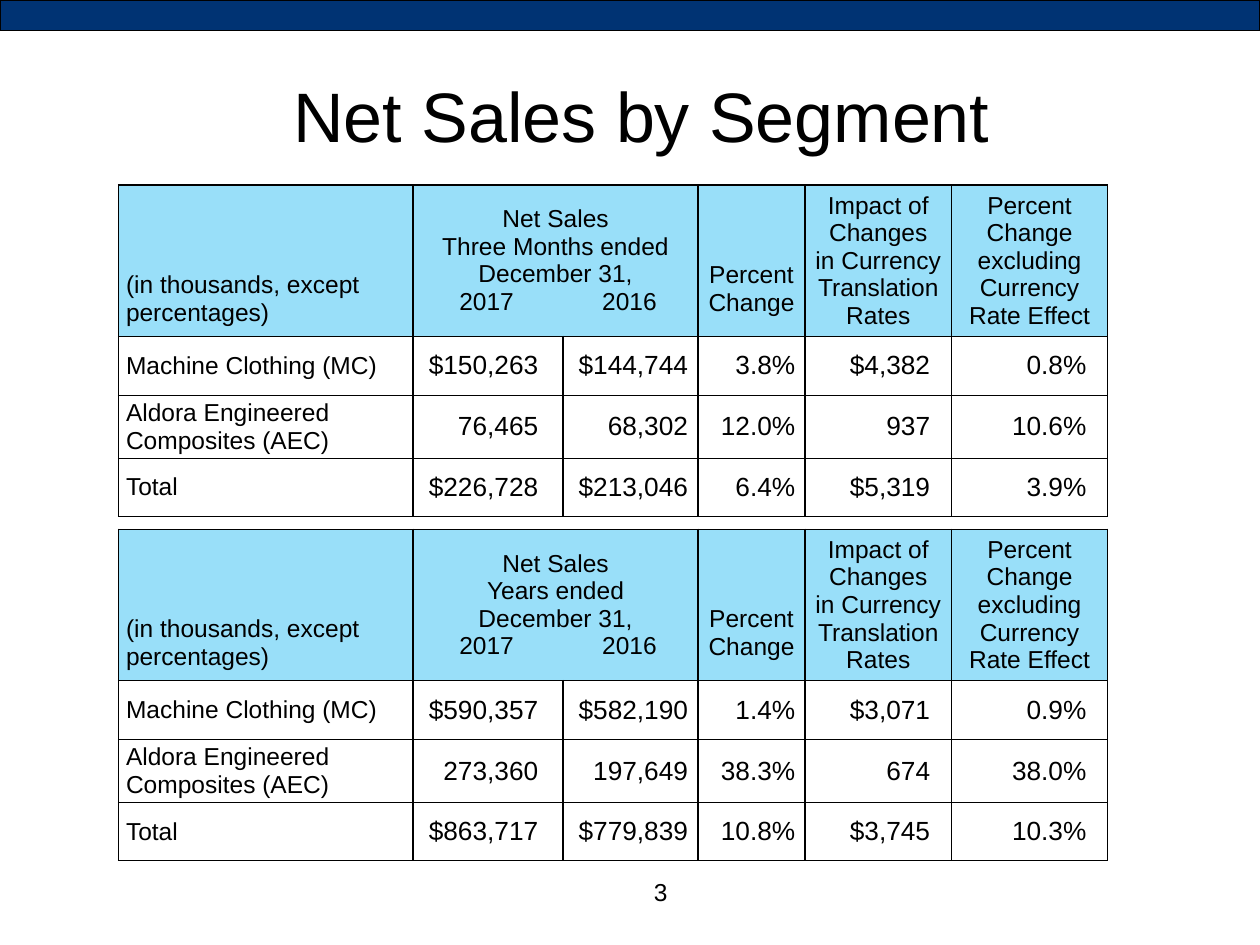
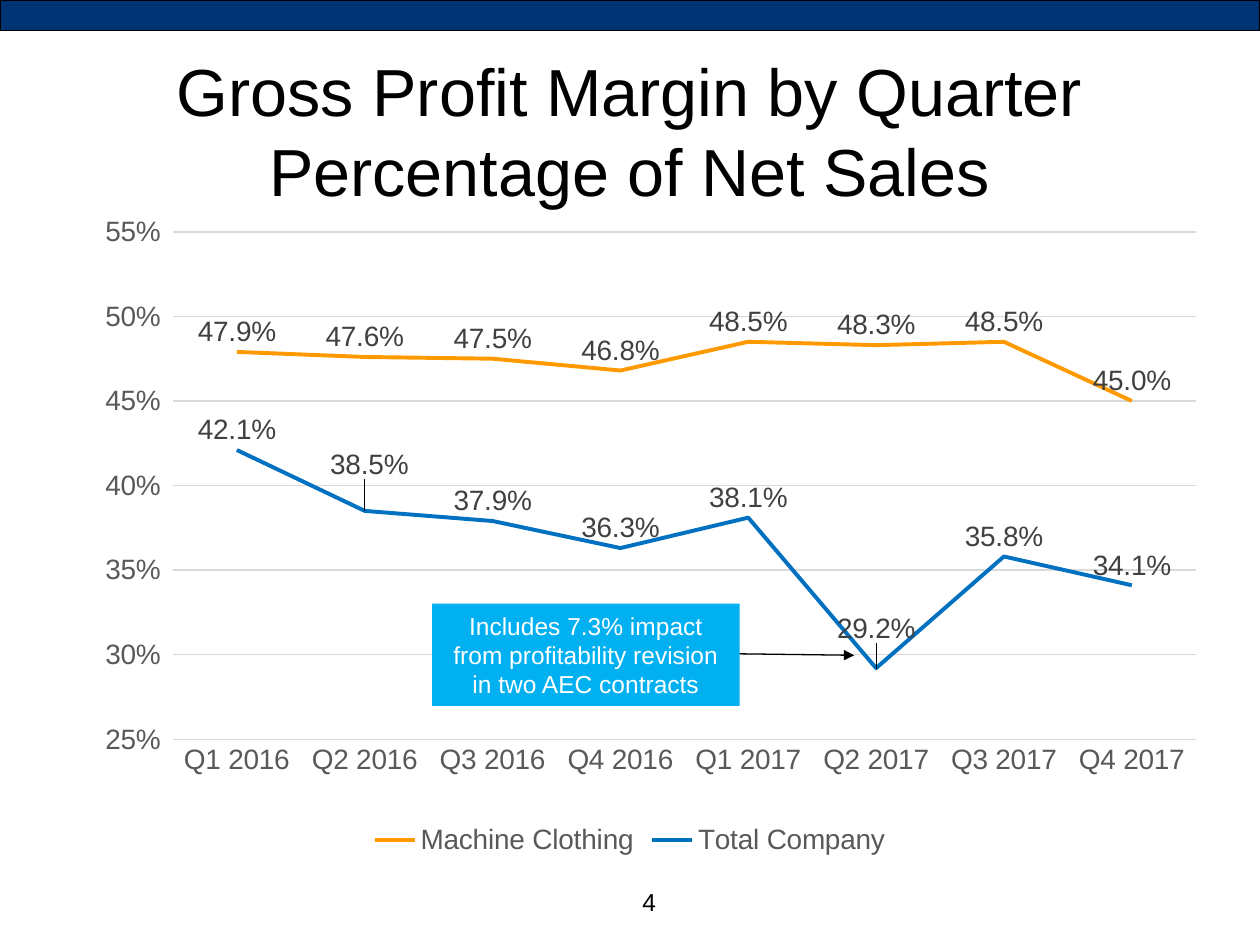
from dataclasses import dataclass

from lxml import etree
from pptx import Presentation
from pptx.chart import data as cd
from pptx.dml.color import RGBColor
from pptx.enum import chart as ch, shapes, text
from pptx.oxml import parse_xml
from pptx.oxml.ns import nsdecls, qn
from pptx.util import Cm, Pt


@dataclass(frozen=True)
class Theme:
    font: str = "Arial"
    black: str = "000000"
    white: str = "FFFFFF"
    navy: str = "003373"
    sky: str = "00B0F0"
    orange: str = "FF9900"
    blue: str = "0070C0"
    axis_grey: str = "595959"
    label_grey: str = "404040"
    grid_grey: str = "D9D9D9"
    body: int = 14
    figure: int = 15
    chart: int = 16
    hairline: float = 0.75


CENTER, LEFT, RIGHT = text.PP_ALIGN.CENTER, text.PP_ALIGN.LEFT, text.PP_ALIGN.RIGHT
TOP, MIDDLE, BOTTOM = (text.MSO_ANCHOR.TOP, text.MSO_ANCHOR.MIDDLE,
                       text.MSO_ANCHOR.BOTTOM)

COLUMN_WIDTHS = (5.94, 3.02, 2.72, 2.16, 2.95, 3.15)
ROW_HEIGHTS = (3.05, 1.19, 1.27, 1.17)
FIGURE_MARGINS = (0.5, 0.2, 0.2, 0.43, 0.43)
YEAR_TABS = (1.33, 4.21)
CELL_MARGIN = 0.15
SEGMENTS = ("Machine Clothing (MC)", "Aldora Engineered Composites (AEC)", "Total")

QUARTER_FIGURES = (
    ("$150,263", "$144,744", "3.8%", "$4,382", "0.8%"),
    ("76,465", "68,302", "12.0%", "937", "10.6%"),
    ("$226,728", "$213,046", "6.4%", "$5,319", "3.9%"),
)
YEAR_FIGURES = (
    ("$590,357", "$582,190", "1.4%", "$3,071", "0.9%"),
    ("273,360", "197,649", "38.3%", "674", "38.0%"),
    ("$863,717", "$779,839", "10.8%", "$3,745", "10.3%"),
)

QUARTERS = [f"Q{q} {year}" for year in (2016, 2017) for q in (1, 2, 3, 4)]
MACHINE_CLOTHING = (0.479, 0.476, 0.475, 0.468, 0.485, 0.483, 0.485, 0.45)
TOTAL_COMPANY = (0.421, 0.385, 0.379, 0.363, 0.381, 0.292, 0.358, 0.341)


def rgb(color):
    return RGBColor.from_string(color)


def manual_layout(**values):
    """Return a c:layout element; keys are the names of its children."""
    children = "".join(f'<c:{k} val="{v}"/>' for k, v in values.items())
    return parse_xml(f'<c:layout {nsdecls("c")}><c:manualLayout>{children}'
                     "</c:manualLayout></c:layout>")


class Deck:
    def __init__(self, theme):
        self.theme = theme
        self.prs = Presentation()
        self.prs.slide_width, self.prs.slide_height = Cm(25.4), Cm(19.05)
        self.s = None

    def new_slide(self, title_lines, x, y, size):
        first = self.s is None
        self.s = self.prs.slides.add_slide(self.prs.slide_layouts[5])
        if first:
            self.master_band()
        sp = self.s.shapes.title
        sp.left, sp.top, sp.width, sp.height = Cm(x), Cm(y), Cm(22.86), Cm(3.18)
        tf = sp.text_frame
        tf.auto_size = text.MSO_AUTO_SIZE.NONE
        tf.vertical_anchor = TOP
        tf.margin_top = Cm(0.25)
        p = tf.paragraphs[0]
        p.alignment = CENTER
        for i, line in enumerate(title_lines):
            if i:
                p.add_line_break()
            self.run(p, line, size)

    def master_band(self):
        """Draw the top band and move it to the master, behind all slides."""
        sp = self.box(0, 0, 25.4, 0.61, self.theme.navy)
        self.outline(sp.line)
        self.prs.slide_master.shapes.element.insert(2, sp.element)

    def style(self, font, size, color=None):
        font.name, font.size = self.theme.font, Pt(size)
        font.color.rgb = rgb(color or self.theme.black)

    def run(self, p, words, size, color=None):
        r = p.add_run()
        r.text = words
        self.style(r.font, size, color)

    def outline(self, line, color=None):
        line.color.rgb = rgb(color or self.theme.black)
        line.width = Pt(self.theme.hairline)

    def box(self, x, y, w, h, fill):
        sp = self.s.shapes.add_shape(shapes.MSO_SHAPE.RECTANGLE,
                                     Cm(x), Cm(y), Cm(w), Cm(h))
        sp.shadow.inherit = False
        sp.fill.solid()
        sp.fill.fore_color.rgb = rgb(fill)
        sp.line.fill.background()
        return sp

    def callout(self, words, x, y, w, h):
        tf = self.box(x, y, w, h, self.theme.sky).text_frame
        tf.word_wrap = True
        tf.vertical_anchor = MIDDLE
        p = tf.paragraphs[0]
        p.alignment = CENTER
        self.run(p, words, self.theme.body, self.theme.white)

    def arrow(self, x1, y1, x2, y2):
        line = self.s.shapes.add_connector(shapes.MSO_CONNECTOR.STRAIGHT,
                                           Cm(x1), Cm(y1), Cm(x2), Cm(y2))
        self.outline(line.line)
        props = line.element.spPr
        ln = props.find(qn("a:ln"))
        etree.SubElement(ln, qn("a:tailEnd"), type="triangle")
        etree.SubElement(props, qn("a:effectLst"))

    def page_number(self, number, x, y, w):
        sp = self.s.shapes.add_textbox(Cm(x), Cm(y), Cm(w), Cm(0.86))
        sp.text_frame.word_wrap = True
        self.run(sp.text_frame.paragraphs[0], str(number), self.theme.body)

    def cell(self, cell, lines, size, align=LEFT, anchor=MIDDLE,
             right=CELL_MARGIN, bottom=0.0, header=False):
        cell.margin_left, cell.margin_right = Cm(CELL_MARGIN), Cm(right)
        cell.margin_top, cell.margin_bottom = 0, Cm(bottom)
        cell.vertical_anchor = anchor
        tf = cell.text_frame
        for i, line in enumerate(lines):
            p = tf.add_paragraph() if i else tf.paragraphs[0]
            p.alignment = align
            if "\t" in line:
                self.year_tabs(p)
            self.run(p, line, size)
        self.cell_frame(cell, header)

    def year_tabs(self, p):
        p.alignment = LEFT
        tabs = etree.SubElement(p._p.get_or_add_pPr(), qn("a:tabLst"))
        for pos in YEAR_TABS:
            etree.SubElement(tabs, qn("a:tab"), pos=str(Cm(pos)), algn="ctr")

    def cell_frame(self, cell, header):
        """Set the fill and the four borders of a cell."""
        if header:
            cell.fill.solid()
            cell.fill.fore_color.rgb = rgb(self.theme.sky)
        else:
            cell.fill.background()
        props = cell._tc.get_or_add_tcPr()
        for color in props.iter(qn("a:srgbClr")):
            etree.SubElement(color, qn("a:alpha"), val="40000")
        for i, side in enumerate("LRTB"):
            props.insert(i, parse_xml(
                f'<a:ln{side} {nsdecls("a")} w="{Pt(1)}"><a:solidFill>'
                f'<a:srgbClr val="{self.theme.black}"/></a:solidFill></a:ln{side}>'))

    def sales_table(self, y, period, figures):
        t = self.theme
        table = self.s.shapes.add_table(
            len(ROW_HEIGHTS), len(COLUMN_WIDTHS), Cm(2.39), Cm(y),
            Cm(sum(COLUMN_WIDTHS)), Cm(sum(ROW_HEIGHTS))).table
        table.first_row = table.horz_banding = False
        for col, width in zip(table.columns, COLUMN_WIDTHS):
            col.width = Cm(width)
        for row, height in zip(table.rows, ROW_HEIGHTS):
            row.height = Cm(height)
        table.cell(0, 1).merge(table.cell(0, 2))
        headers = (
            (["(in thousands, except percentages)"], LEFT, BOTTOM, 0.2),
            (["Net Sales", period, "December 31,", "\t2017\t2016"], CENTER, MIDDLE, 0),
            ([], CENTER, MIDDLE, 0),
            (["Percent", "Change"], CENTER, BOTTOM, 0.4),
            (["Impact of Changes", "in Currency", "Translation Rates"],
             CENTER, MIDDLE, 0),
            (["Percent Change", "excluding Currency Rate Effect"], CENTER, MIDDLE, 0),
        )
        for c, (lines, align, anchor, bottom) in enumerate(headers):
            self.cell(table.cell(0, c), lines, t.body, align, anchor,
                      bottom=bottom, header=True)
        for r, (segment, values) in enumerate(zip(SEGMENTS, figures), 1):
            self.cell(table.cell(r, 0), [segment], t.body)
            for c, (value, margin) in enumerate(zip(values, FIGURE_MARGINS), 1):
                self.cell(table.cell(r, c), [value], t.figure, RIGHT, right=margin)

    def margin_chart(self, x, y, w, h):
        t = self.theme
        data = cd.CategoryChartData(number_format="0.0%")
        data.categories = QUARTERS
        data.add_series("Machine Clothing", MACHINE_CLOTHING)
        data.add_series("Total Company", TOTAL_COMPANY)
        chart = self.s.shapes.add_chart(ch.XL_CHART_TYPE.LINE, Cm(x), Cm(y),
                                        Cm(w), Cm(h), data).chart
        self.style(chart.font, t.chart, t.axis_grey)
        chart.has_title = False
        chart.has_legend = True
        chart.legend.position = ch.XL_LEGEND_POSITION.BOTTOM
        chart.legend.include_in_layout = False
        self.style(chart.legend.font, t.chart, t.axis_grey)
        self.chart_axes(chart.category_axis, chart.value_axis)
        plot = chart.plots[0]
        plot.vary_by_categories = False
        for series, color in zip(plot.series, (t.orange, t.blue)):
            series.smooth = False
            series.format.line.color.rgb = rgb(color)
            series.format.line.width = Pt(2.25)
            labels = series.data_labels
            labels.show_value = True
            labels.number_format, labels.number_format_is_linked = "0.0%", False
            labels.position = ch.XL_LABEL_POSITION.ABOVE
            self.style(labels.font, t.chart, t.label_grey)
        self.shift_label(chart, 1, 0.004, -0.04)
        self.shift_label(chart, 5, 0, -0.03)
        area = chart.element.find(".//" + qn("c:plotArea"))
        for old in area.findall(qn("c:layout")):
            area.remove(old)
        area.insert(0, manual_layout(layoutTarget="inner", xMode="edge", yMode="edge",
                                     x=0.097, y=0.031, w=0.902, h=0.782))

    def chart_axes(self, category, value):
        t = self.theme
        for axis in (category, value):
            self.style(axis.tick_labels.font, t.chart, t.axis_grey)
        category.major_tick_mark = ch.XL_TICK_MARK.NONE
        self.outline(category.format.line, t.grid_grey)
        value.minimum_scale, value.maximum_scale = 0.25, 0.55
        value.major_unit = 0.05
        value.tick_labels.number_format = "0%"
        value.tick_labels.number_format_is_linked = False
        value.format.line.fill.background()
        value.has_major_gridlines = True
        self.outline(value.major_gridlines.format.line, t.grid_grey)

    def shift_label(self, chart, index, dx, dy):
        """Move one label of the second series by a share of the chart size."""
        label = chart.plots[0].series[1].points[index].data_label
        self.style(label.font, self.theme.chart, self.theme.label_grey)
        label.position = ch.XL_LABEL_POSITION.ABOVE
        for node in chart.element.iter(qn("c:dLbl")):
            if node.find(qn("c:idx")).get("val") == str(index):
                node.insert(1, manual_layout(x=dx, y=dy))
                node.insert(2, parse_xml(f'<c:numFmt {nsdecls("c")} '
                                         'formatCode="0.0%" sourceLinked="0"/>'))


def main():
    deck = Deck(Theme())

    deck.new_slide(["Net Sales by Segment"], 1.5, 1.22, 40)
    deck.page_number(3, 12.93, 17.55, 0.86)
    deck.sales_table(3.73, "Three Months ended", QUARTER_FIGURES)
    deck.sales_table(10.67, "Years ended", YEAR_FIGURES)

    deck.new_slide(["Gross Profit Margin by Quarter", "Percentage of Net Sales"],
                   1.27, 0.76, 38)
    deck.margin_chart(1.27, 4.27, 22.86, 13.08)
    deck.page_number(4, 12.7, 17.75, 1.19)
    deck.callout("Includes 7.3% impact from profitability revision in two AEC contracts",
                 8.71, 12.17, 6.2, 2.06)
    deck.arrow(14.91, 13.18, 17.22, 13.21)

    deck.prs.save("out.pptx")


if __name__ == "__main__":
    main()
